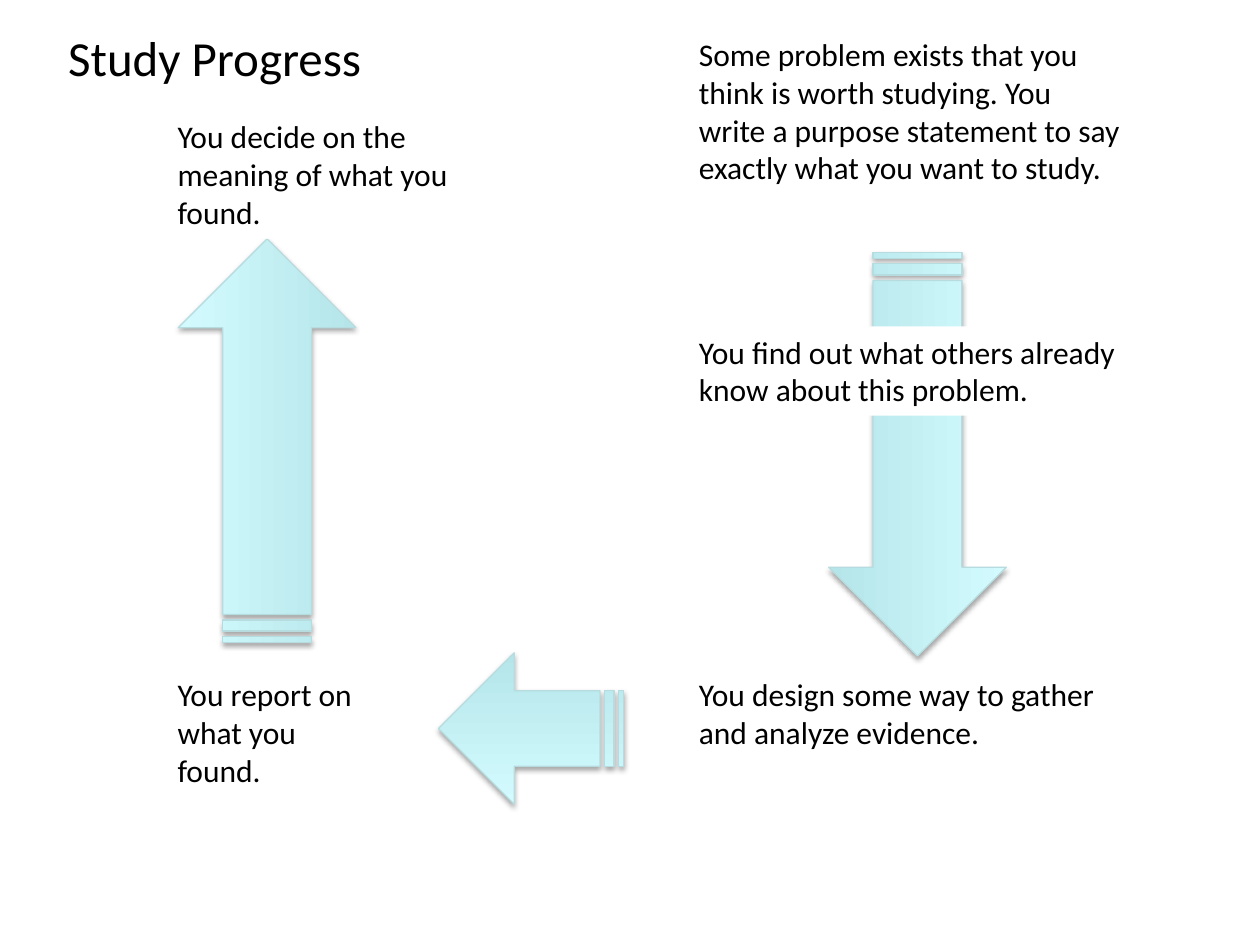
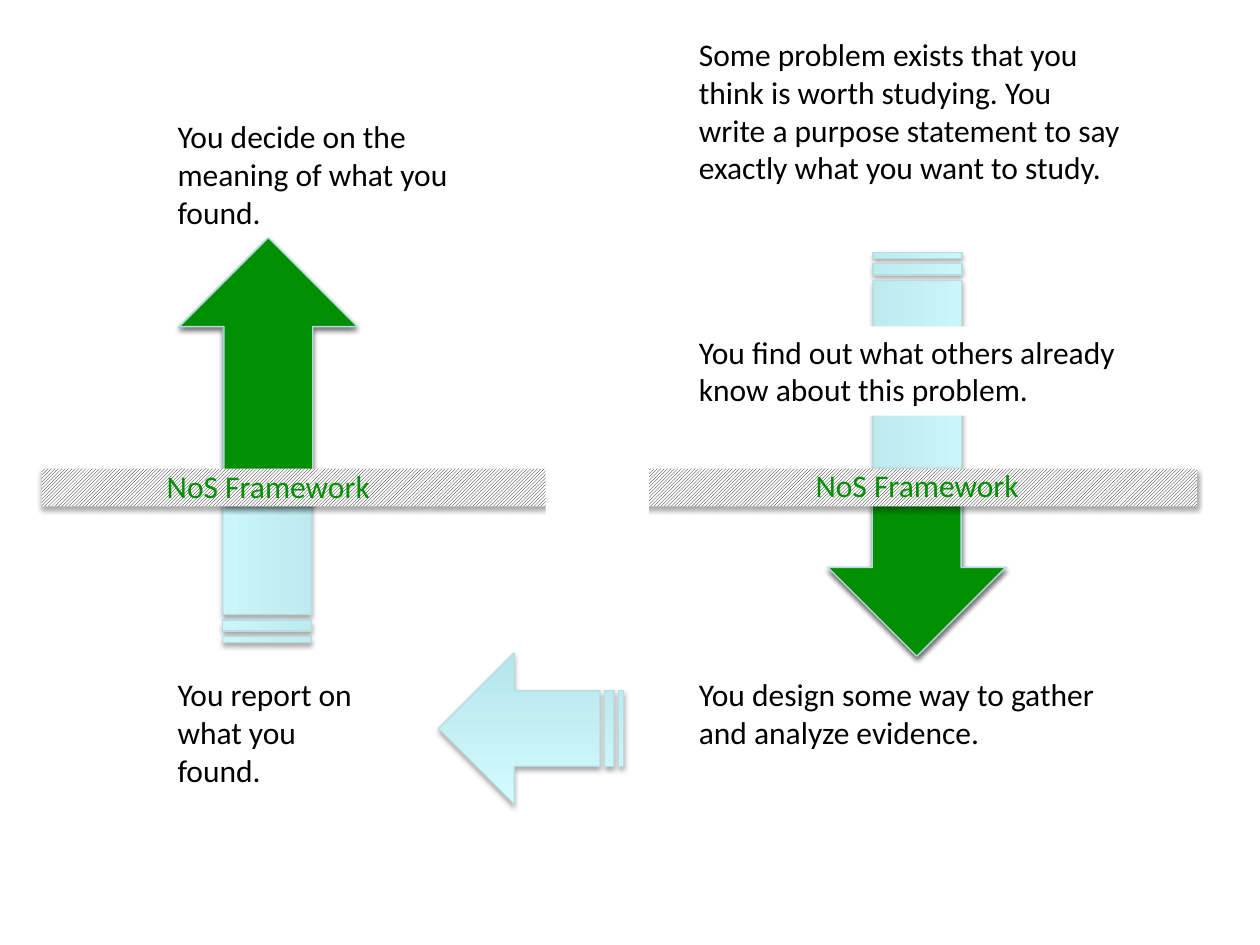
from lxml.etree import SubElement
from pptx import Presentation
from pptx.dml.color import RGBColor
from pptx.enum.dml import MSO_PATTERN
from pptx.enum.shapes import MSO_SHAPE
from pptx.enum.text import MSO_ANCHOR, MSO_AUTO_SIZE, PP_ALIGN
from pptx.oxml.ns import qn
from pptx.util import Cm, Pt

BLACK = RGBColor(0x00, 0x00, 0x00)
WHITE = RGBColor(0xFF, 0xFF, 0xFF)
GREEN = RGBColor(0x00, 0x8F, 0x00)
DEEP = RGBColor(0xB5, 0xE5, 0xE9)
PALE = RGBColor(0xD3, 0xFB, 0xFF)
EDGE = RGBColor(0xB6, 0xDC, 0xDF)

# Places are (left, top, width, height) in centimetres.
TITLE = ("Study Progress", (1.12, 0.43, 11.66, 1.45))
LEFT, RIGHT = 3.33, 13.84
STEPS = [
    ("Some problem exists that you think is worth studying. You write a "
     "purpose statement to say exactly what you want to study.",
     (RIGHT, 0.58, 9.09, 3.33)),
    ("You find out what others already know about this problem.",
     (RIGHT, 6.58, 9.14, 1.8)),
    ("You design some way to gather and analyze evidence.",
     (RIGHT, 13.49, 9.14, 1.8)),
    ("You report on what you found.", (LEFT, 13.49, 4.55, 2.57)),
    ("You decide on the meaning of what you found.",
     (LEFT, 2.24, 6.17, 2.57)),
]
DOWN, BACK, UP = 90, 180, 270
FLOW = [
    (DOWN, (14.43, 7.37, 8.13, 3.58)),
    (UP, (1.32, 7.09, 8.13, 3.58)),
    (BACK, (8.84, 13.16, 3.73, 3.05)),
]
PASSED = [
    (DOWN, (16.59, 9.55, 3.78, 3.58)),
    (UP, (2.72, 5.69, 5.38, 3.58)),
]
BAR = (0.84, 9.45, 23.29, 0.76)
GAP = (11, 8.69, 2.08, 2.11)
FRAME = "NoS Framework"
LABELS = [(14.68, 9.27, 7.62, 1.02), (1.83, 9.3, 7.16, 1.02)]


def cms(place):
    return [Cm(n) for n in place]


def write(shape, text, size=18, color=BLACK, align=PP_ALIGN.LEFT):
    frame = shape.text_frame
    look = {"word_wrap": True, "auto_size": MSO_AUTO_SIZE.SHAPE_TO_FIT_TEXT,
            "vertical_anchor": MSO_ANCHOR.TOP}
    for key, value in look.items():
        setattr(frame, key, value)
    frame.text = text
    para = frame.paragraphs[0]
    para.alignment = align
    font = para.runs[0].font
    for key, value in {"name": "Calibri", "size": Pt(size)}.items():
        setattr(font, key, value)
    font.color.rgb = color


def shade(shape):
    """Give the shape a soft shadow straight below it."""
    shape.shadow.inherit = False
    effects = shape._element.spPr.find(qn("a:effectLst"))
    shadow = SubElement(effects, qn("a:outerShdw"), blurRad=str(Pt(3.1)),
                        dist=str(Pt(1.8)), dir="5400000", rotWithShape="0")
    ink = SubElement(shadow, qn("a:srgbClr"), val=str(BLACK))
    SubElement(ink, qn("a:alpha"), val="35000")


def draw_arrows(shapes, arrows, color=None):
    """Draw striped arrows in one colour, or in the blue gradient."""
    for turn, place in arrows:
        arrow = shapes.add_shape(MSO_SHAPE.STRIPED_RIGHT_ARROW, *cms(place))
        arrow.rotation = turn
        if color is None:
            arrow.fill.gradient()
            arrow.fill.gradient_angle = 90
            for stop, tone, pos in zip(arrow.fill.gradient_stops,
                                       (DEEP, PALE), (0, 1)):
                stop.color.rgb = tone
                stop.position = pos
        else:
            arrow.fill.solid()
            arrow.fill.fore_color.rgb = color
        arrow.line.color.rgb = EDGE
        arrow.line.width = Pt(0.75)
        shade(arrow)


def draw_steps(shapes):
    for text, place in STEPS:
        box = shapes.add_textbox(*cms(place))
        box.fill.solid()
        box.fill.fore_color.rgb = WHITE
        write(box, text)


def draw_frame(shapes):
    """Lay the hatched bar across both columns, with its two labels."""
    bar = shapes.add_shape(MSO_SHAPE.RECTANGLE, *cms(BAR))
    bar.fill.patterned()
    bar.fill.pattern = MSO_PATTERN.LIGHT_UPWARD_DIAGONAL
    bar.fill.fore_color.rgb = BLACK
    bar.fill.back_color.rgb = WHITE
    bar.line.fill.background()
    shade(bar)
    for place in LABELS:
        write(shapes.add_textbox(*cms(place)), FRAME, color=GREEN,
              align=PP_ALIGN.CENTER)
    gap = shapes.add_shape(MSO_SHAPE.RECTANGLE, *cms(GAP))
    gap.fill.solid()
    gap.fill.fore_color.rgb = WHITE
    gap.line.fill.background()
    gap.shadow.inherit = False


def main():
    deck = Presentation()
    deck.slide_width, deck.slide_height = Cm(25.4), Cm(19.05)
    only, blank = deck.slide_layouts[5], deck.slide_layouts[6]

    first = deck.slides.add_slide(only).shapes
    text, place = TITLE
    head = first.title
    for key, value in zip(("left", "top", "width", "height"), cms(place)):
        setattr(head, key, value)
    write(head, text, size=28)
    draw_arrows(first.add_group_shape().shapes, FLOW)
    draw_steps(first)

    second = deck.slides.add_slide(blank).shapes
    draw_arrows(second, FLOW)
    draw_steps(second)
    draw_arrows(second, PASSED, GREEN)
    draw_frame(second)

    deck.save("out.pptx")


if __name__ == "__main__":
    main()
